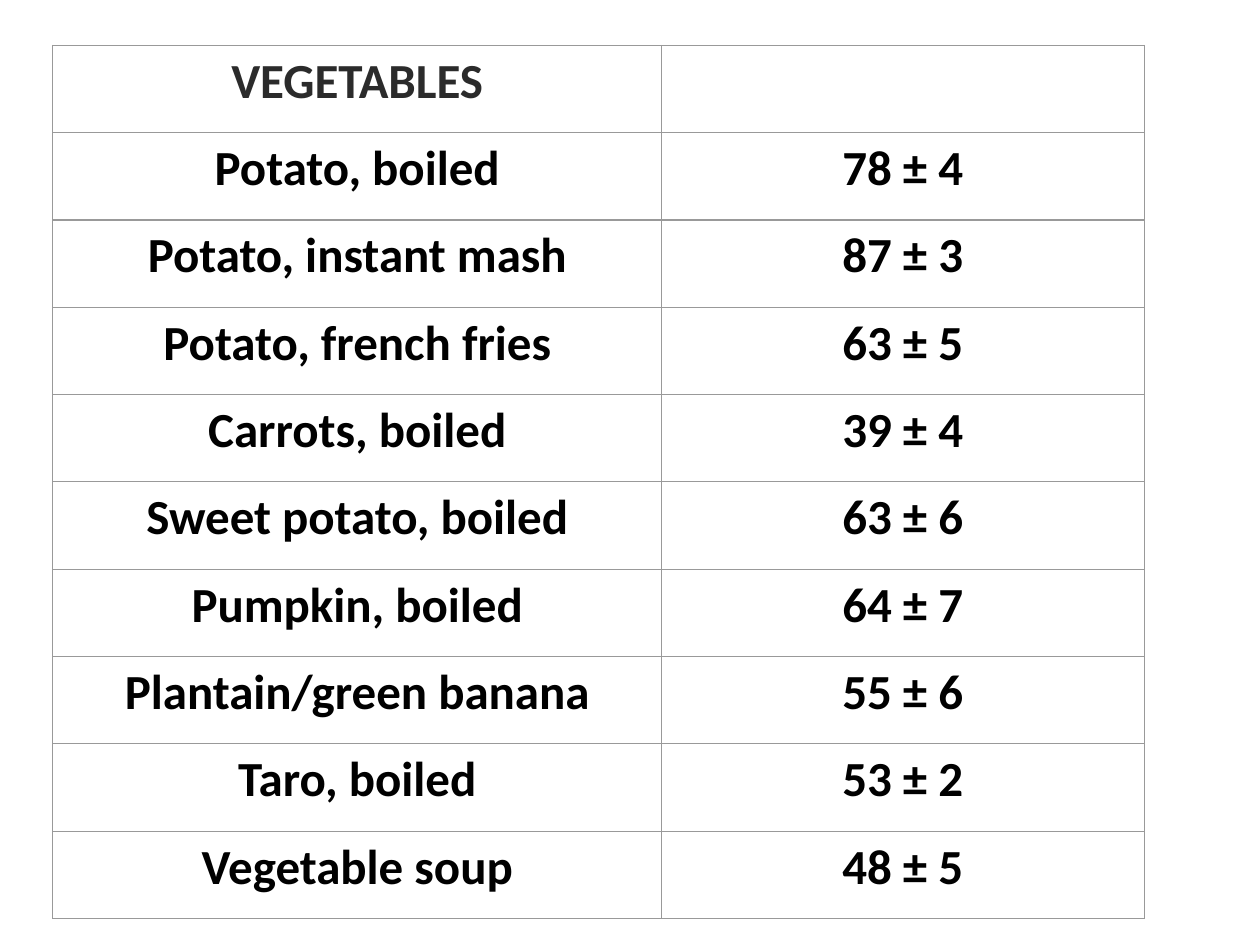
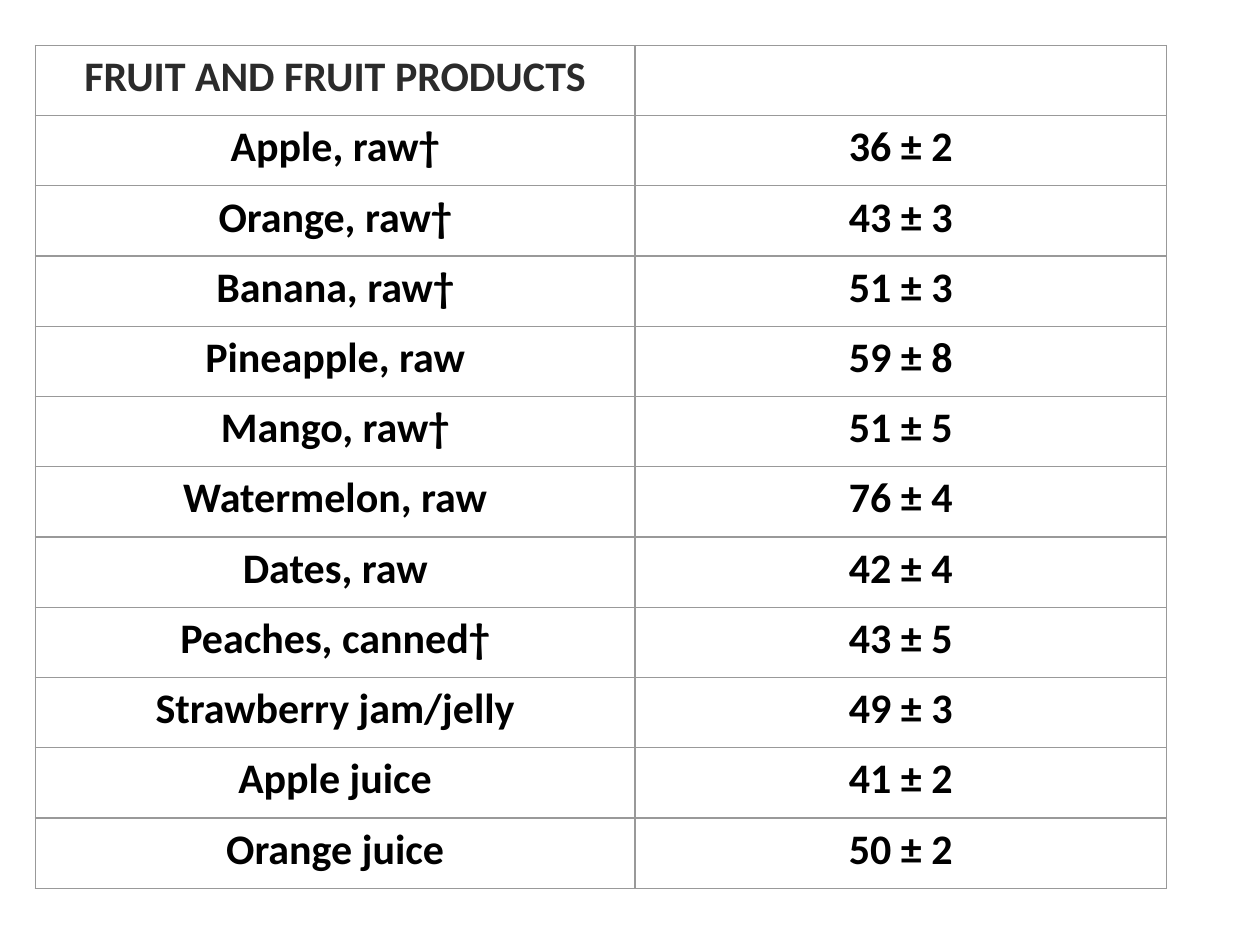
from lxml.etree import SubElement
from pptx import Presentation
from pptx.dml.color import RGBColor
from pptx.enum.text import MSO_ANCHOR, PP_ALIGN
from pptx.oxml.ns import qn
from pptx.util import Inches, Pt

# Content: one table of foods and index values per slide
TABLES = [
    {
        "left": 0.42, "columns": (4.83, 3.83), "height": 6.93, "font_size": 28,
        "rows": [
            ("VEGETABLES", ""),
            ("Potato, boiled", "78 ± 4"),
            ("Potato, instant mash", "87 ± 3"),
            ("Potato, french fries", "63 ± 5"),
            ("Carrots, boiled", "39 ± 4"),
            ("Sweet potato, boiled", "63 ± 6"),
            ("Pumpkin, boiled", "64 ± 7"),
            ("Plantain/green banana", "55 ± 6"),
            ("Taro, boiled", "53 ± 2"),
            ("Vegetable soup", "48 ± 5"),
        ],
    },
    {
        "left": 0.28, "columns": (4.76, 4.22), "height": 6.69, "font_size": 24,
        "rows": [
            ("FRUIT AND FRUIT PRODUCTS", ""),
            ("Apple, raw†", "36 ± 2"),
            ("Orange, raw†", "43 ± 3"),
            ("Banana, raw†", "51 ± 3"),
            ("Pineapple, raw", "59 ± 8"),
            ("Mango, raw†", "51 ± 5"),
            ("Watermelon, raw", "76 ± 4"),
            ("Dates, raw", "42 ± 4"),
            ("Peaches, canned†", "43 ± 5"),
            ("Strawberry jam/jelly", "49 ± 3"),
            ("Apple juice", "41 ± 2"),
            ("Orange juice", "50 ± 2"),
        ],
    },
]

# Shared style
COLORS = {"heading": "2B2B2B", "body": "000000", "cell": "FFFFFF", "border": "999999"}
FONT = "Calibri"
TABLE_TOP = 0.36
CELL_MARGIN = Inches(0.05)
BORDER_WIDTH = Pt(0.75)


def add_borders(cell):
    """Draw the four sides; they must come before the fill in the cell's XML."""
    properties = cell._tc.get_or_add_tcPr()
    for side in ("a:lnL", "a:lnR", "a:lnT", "a:lnB"):
        line = SubElement(properties, qn(side), w=str(BORDER_WIDTH))
        fill = SubElement(line, qn("a:solidFill"))
        SubElement(fill, qn("a:srgbClr"), val=COLORS["border"])


def style_cell(cell, text, font_size, color):
    add_borders(cell)
    cell.fill.solid()
    cell.fill.fore_color.rgb = RGBColor.from_string(COLORS["cell"])
    cell.margin_left = cell.margin_right = CELL_MARGIN
    cell.margin_top = cell.margin_bottom = CELL_MARGIN
    cell.vertical_anchor = MSO_ANCHOR.TOP
    cell.text = text
    paragraph = cell.text_frame.paragraphs[0]
    paragraph.alignment = PP_ALIGN.CENTER
    font = paragraph.font
    font.name, font.size, font.bold = FONT, Pt(font_size), True
    font.color.rgb = RGBColor.from_string(color)


def add_food_table(slide, content):
    rows, columns = content["rows"], content["columns"]
    shape = slide.shapes.add_table(
        len(rows), len(columns), Inches(content["left"]), Inches(TABLE_TOP),
        Inches(sum(columns)), Inches(content["height"]))
    table = shape.table
    table.first_row = table.horz_banding = False
    for column, width in zip(table.columns, columns):
        column.width = Inches(width)
    for row_index, (row, texts) in enumerate(zip(table.rows, rows)):
        row.height = Inches(content["height"] / len(rows))
        color = COLORS["body"] if row_index else COLORS["heading"]
        for cell, text in zip(row.cells, texts):
            style_cell(cell, text, content["font_size"], color)


def main():
    presentation = Presentation()
    presentation.slide_width, presentation.slide_height = Inches(10), Inches(7.5)
    blank_layout = presentation.slide_layouts[6]
    for content in TABLES:
        add_food_table(presentation.slides.add_slide(blank_layout), content)
    presentation.save("out.pptx")


if __name__ == "__main__":
    main()
